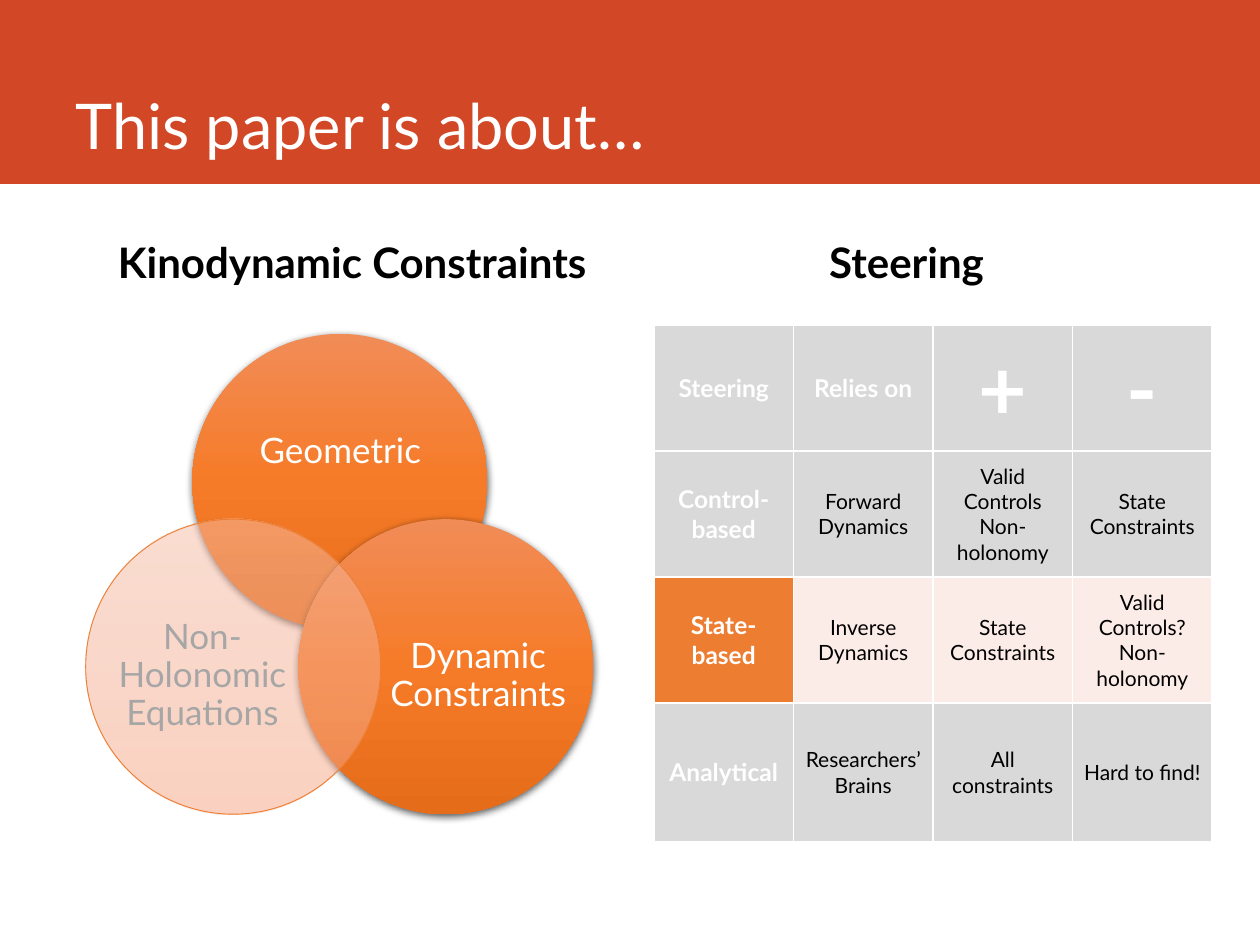
from collections import namedtuple

from lxml.etree import SubElement
from pptx import Presentation
from pptx.dml.color import RGBColor
from pptx.enum.shapes import MSO_SHAPE
from pptx.enum.text import MSO_ANCHOR, MSO_AUTO_SIZE, PP_ALIGN
from pptx.oxml.ns import qn
from pptx.util import Inches, Pt

FONT = "Lato"
COLORS = {
    "band": "D24726",
    "white": "FFFFFF",
    "black": "000000",
    "muted_text": "A6A6A6",
    "muted_cell": "D9D9D9",
    "accent": "ED7D31",
    "accent_tint": "FCECE8",
}
SOLID_STOPS = [(0, "F18C57"), (50, "F67B28"), (100, "E56C19")]
FADED_STOPS = [(0, "F7BDA5"), (50, "F5B196"), (100, "F8A582")]
CIRCLES = [
    ("Geometric", (0.21, 0), (0.288, 0.108, 0.427, 0.276), False),
    ("Dynamic Constraints", (0.419, 0.386), (0.598, 0.543, 0.35, 0.339), False),
    ("Non-Holonomic Equations", (0, 0.386), (0.055, 0.543, 0.35, 0.339), True),
]
STEERING_ROWS = [
    ["Steering", "Relies on", "+", "-"],
    ["Control-based", "Forward Dynamics", "Valid Controls\nNon-holonomy", "State Constraints"],
    ["State-based", "Inverse Dynamics", "State Constraints", "Valid Controls?\nNon-holonomy"],
    ["Analytical", "Researchers’ Brains", "All constraints", "Hard to find!"],
]
ROW_HEIGHTS = [1, 1, 1, 1.1]
HIGHLIGHTED_ROW = 2

Box = namedtuple("Box", "left top width height")


def inside(box, left, top, width, height):
    return Box(
        box.left + left * box.width,
        box.top + top * box.height,
        width * box.width,
        height * box.height,
    )


def emu(box):
    return [Inches(length) for length in box]


def color(name):
    return RGBColor.from_string(COLORS[name])


def place(shape, box):
    shape.left, shape.top, shape.width, shape.height = emu(box)


def write(text_frame, text, size, color_name, bold=False, align=PP_ALIGN.CENTER):
    text_frame.text = text
    for paragraph in text_frame.paragraphs:
        paragraph.alignment = align
        for run in paragraph.runs:
            run.font.name = FONT
            run.font.size = Pt(size)
            run.font.bold = bold
            run.font.color.rgb = color(color_name)


def add_title(slide, box):
    band = slide.shapes.add_shape(MSO_SHAPE.RECTANGLE, *emu(box))
    band.fill.solid()
    band.fill.fore_color.rgb = color("band")
    band.line.fill.background()
    band.shadow.inherit = False
    slide.shapes._spTree.insert(2, band._element)

    title = slide.shapes.title
    place(title, inside(box, 0.05, 0, 0.881, 0.918))
    write(title.text_frame, "This paper is about…", 36, "white", align=PP_ALIGN.LEFT)
    title.text_frame.vertical_anchor = MSO_ANCHOR.BOTTOM
    title.text_frame.auto_size = MSO_AUTO_SIZE.NONE


def add_heading(placeholder, box, text):
    place(placeholder, box)
    text_frame = placeholder.text_frame
    write(text_frame, text, 24, "black", bold=True)
    text_frame.vertical_anchor = MSO_ANCHOR.BOTTOM
    text_frame.auto_size = MSO_AUTO_SIZE.NONE
    text_frame.paragraphs[0].line_spacing = 0.9
    text_frame.paragraphs[0].space_before = Pt(7)


def fill_gradient(shape, stops, opacity):
    shape.fill.gradient()
    shape.fill.gradient_angle = 270
    stop_list = next(shape._element.spPr.iter(qn("a:gsLst")))
    for stop in list(stop_list):
        stop_list.remove(stop)
    for position, value in stops:
        stop = SubElement(stop_list, qn("a:gs"), pos=str(position * 1000))
        stop_color = SubElement(stop, qn("a:srgbClr"), val=value)
        SubElement(stop_color, qn("a:alpha"), val=str(opacity * 1000))


def add_shadow(shape):
    effects = shape._element.spPr.find(qn("a:effectLst"))
    shadow = SubElement(
        effects, qn("a:outerShdw"), blurRad=str(Pt(4.5)), dist=str(Pt(1.5)),
        dir="5400000", algn="ctr", rotWithShape="0",
    )
    shadow_color = SubElement(shadow, qn("a:srgbClr"), val=COLORS["black"])
    SubElement(shadow_color, qn("a:alpha"), val="63000")


def add_venn(slide, box):
    group = slide.shapes.add_group_shape()
    diameter = 0.581 * box.width
    for text, corner, label_share, faded in CIRCLES:
        corner_box = inside(box, *corner, 0, 0)
        circle_box = Box(corner_box.left, corner_box.top, diameter, diameter)
        circle = group.shapes.add_shape(MSO_SHAPE.OVAL, *emu(circle_box))
        circle.shadow.inherit = False
        if faded:
            fill_gradient(circle, FADED_STOPS, 50)
            circle.line.color.rgb = color("accent")
            circle.line.width = Pt(0.5)
        else:
            fill_gradient(circle, SOLID_STOPS, 100)
            circle.line.fill.background()
            add_shadow(circle)

        label = group.shapes.add_textbox(*emu(inside(box, *label_share)))
        text_frame = label.text_frame
        text_frame.word_wrap = True
        text_frame.vertical_anchor = MSO_ANCHOR.MIDDLE
        text_frame.margin_left = text_frame.margin_right = 0
        text_frame.margin_top = text_frame.margin_bottom = 0
        write(text_frame, text, 20, "muted_text" if faded else "white")
        text_frame.paragraphs[0].line_spacing = 0.9
        text_frame.paragraphs[0].space_after = Pt(7)


def add_steering_table(slide, box):
    column_count = len(STEERING_ROWS[0])
    table = slide.shapes.add_table(len(STEERING_ROWS), column_count, *emu(box)).table
    for column in table.columns:
        column.width = Inches(box.width / column_count)
    for row_index, texts in enumerate(STEERING_ROWS):
        table.rows[row_index].height = Inches(box.height * ROW_HEIGHTS[row_index] / sum(ROW_HEIGHTS))
        for column_index, text in enumerate(texts):
            cell = table.cell(row_index, column_index)
            is_header = row_index == 0 or column_index == 0
            fill_name = "muted_cell"
            if row_index == HIGHLIGHTED_ROW:
                fill_name = "accent" if is_header else "accent_tint"
            cell.fill.solid()
            cell.fill.fore_color.rgb = color(fill_name)
            cell.vertical_anchor = MSO_ANCHOR.MIDDLE
            cell.margin_left = cell.margin_right = Inches(0.07)
            cell.margin_top = cell.margin_bottom = Inches(0.03)
            size = 48 if text in ("+", "-") else 14 if is_header else 12
            write(cell.text_frame, text, size, "white" if is_header else "black", is_header)


def main():
    presentation = Presentation()
    presentation.slide_width = Inches(10)
    presentation.slide_height = Inches(7.5)
    slide = presentation.slides.add_slide(presentation.slide_layouts.get_by_name("Comparison"))
    placeholders = {shape.placeholder_format.idx: shape for shape in slide.placeholders}
    for index in (2, 4):
        element = placeholders[index]._element
        element.getparent().remove(element)

    add_title(slide, Box(0, 0, 10, 1.46))
    add_heading(placeholders[1], Box(0.68, 1.63, 4.23, 0.7), "Kinodynamic Constraints")
    add_venn(slide, Box(0.68, 2.65, 4.03, 3.81))
    add_heading(placeholders[3], Box(5.08, 1.63, 4.23, 0.7), "Steering")
    add_steering_table(slide, Box(5.19, 2.58, 4.43, 4.1))
    presentation.save("out.pptx")


if __name__ == "__main__":
    main()
